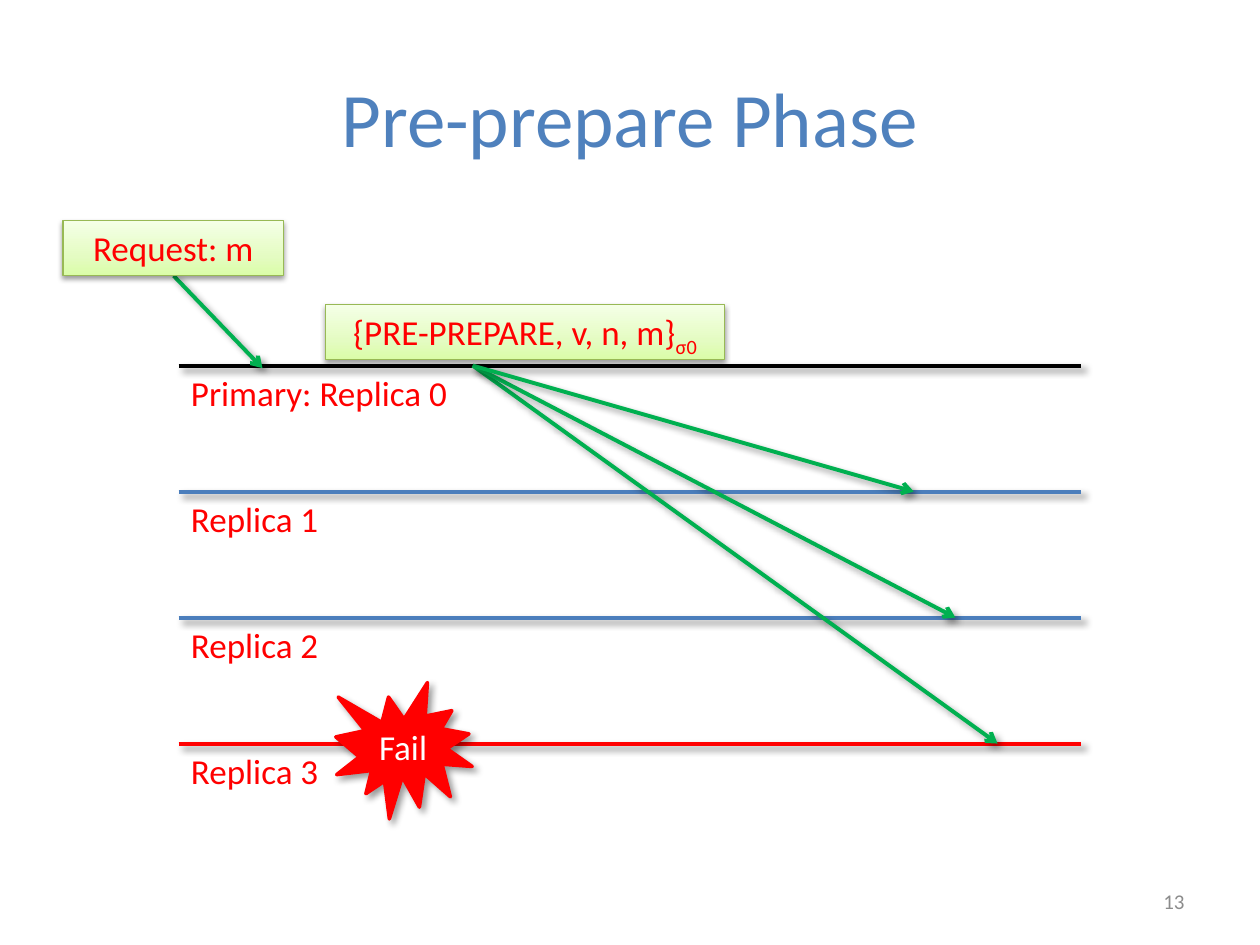
from copy import deepcopy

from lxml import etree
from pptx import Presentation
from pptx.dml.color import RGBColor
from pptx.enum import shapes, text
from pptx.oxml import parse_xml
from pptx.oxml.ns import nsdecls, qn
from pptx.util import Cm, Pt

BLACK = RGBColor(0x00, 0x00, 0x00)
WHITE = RGBColor(0xFF, 0xFF, 0xFF)
RED = RGBColor(0xFF, 0x00, 0x00)
GREEN = RGBColor(0x00, 0xB0, 0x50)
BLUE = RGBColor(0x4B, 0x7E, 0xBC)
TITLE_BLUE = RGBColor(0x4F, 0x81, 0xBD)
GREY = RGBColor(0x8C, 0x8C, 0x8C)
BOX_EDGE = RGBColor(0x98, 0xB9, 0x55)
BOX_DARK = RGBColor(0xDA, 0xFD, 0xA7)
BOX_MIDDLE = RGBColor(0xE4, 0xFC, 0xC2)
BOX_LIGHT = RGBColor(0xF5, 0xFF, 0xE7)

LEFT, RIGHT = 3.6, 21.8
FIRST_ROW, ROW_STEP = 7.37, 2.54
ROWS = [FIRST_ROW + i * ROW_STEP for i in range(4)]
LABEL_HEIGHT = 1.11


def write(shape, pieces, size=20, color=RED, align=text.PP_ALIGN.LEFT):
    """Fill a shape with one paragraph; any piece after the first is a subscript."""
    frame = shape.text_frame
    frame.word_wrap = True
    paragraph = frame.paragraphs[0]
    paragraph.alignment = align
    for i, piece in enumerate(pieces):
        run = paragraph.add_run()
        run.text = piece
        run.font.name = "Calibri"
        run.font.size = Pt(size)
        run.font.color.rgb = color
        if i:
            run.font._element.set("baseline", "-25000")


def add_shadow(shape, opacity=40, blur=4, distance=3, angle=45):
    shape._element.spPr.append(parse_xml(
        f'<a:effectLst {nsdecls("a")}>'
        f'<a:outerShdw blurRad="{Pt(blur)}" dist="{Pt(distance)}" '
        f'dir="{angle * 60000}" rotWithShape="0">'
        f'<a:srgbClr val="000000"><a:alpha val="{opacity * 1000}"/></a:srgbClr>'
        '</a:outerShdw></a:effectLst>'))


prs = Presentation()
prs.slide_width, prs.slide_height = Cm(25.4), Cm(19.05)
slide = prs.slides.add_slide(prs.slide_layouts[5])

title = slide.shapes.title
title.left, title.top, title.width, title.height = Cm(1.27), Cm(0.76), Cm(22.86), Cm(3.18)
title.text_frame.vertical_anchor = text.MSO_ANCHOR.MIDDLE
write(title, ["Pre-prepare Phase"], 44, TITLE_BLUE, text.PP_ALIGN.CENTER)

# Timelines of the replicas, then the messages sent between them
timelines = [(LEFT, y, RIGHT, y, color, False)
             for y, color in zip(ROWS, (BLACK, BLUE, BLUE, RED))]
messages = [(9.53, ROWS[0], x, y, GREEN, True)
            for x, y in zip((18.42, 19.26, 20.11), ROWS[1:])]
request = (3.5, 5.56, 5.29, 7.42, GREEN, True)
for x1, y1, x2, y2, color, is_message in timelines + messages[::-1] + [request]:
    line = slide.shapes.add_connector(
        shapes.MSO_CONNECTOR.STRAIGHT, Cm(x1), Cm(y1), Cm(x2), Cm(y2))
    line.line.color.rgb = color
    line.line.width = Pt(2.25)
    if is_message:
        etree.SubElement(line.line._get_or_add_ln(), qn("a:tailEnd"), type="arrow")
    add_shadow(line)

replicas = ["Primary: Replica 0", "Replica 1", "Replica 2", "Replica 3"]
for replica, y in zip(replicas, ROWS):
    label = slide.shapes.add_textbox(Cm(LEFT), Cm(y), Cm(6.78), Cm(LABEL_HEIGHT))
    if y > FIRST_ROW:
        label.width = Cm(4.45)
    write(label, [replica])
    label.text_frame.auto_size = text.MSO_AUTO_SIZE.SHAPE_TO_FIT_TEXT

for x, y, width, content in [
    (1.27, 4.45, 4.45, ["Request: m"]),
    (6.56, 6.14, 8.05, ["{PRE-PREPARE, v, n, m}", "σ0"]),
]:
    box = slide.shapes.add_shape(
        shapes.MSO_SHAPE.RECTANGLE, Cm(x), Cm(y), Cm(width), Cm(LABEL_HEIGHT))
    box.fill.gradient()
    box.fill.gradient_angle = 90
    first_stop = box.fill.gradient_stops[0]._gs
    first_stop.addnext(deepcopy(first_stop))
    for stop, position, color in zip(
            box.fill.gradient_stops, (0, 0.35, 1), (BOX_DARK, BOX_MIDDLE, BOX_LIGHT)):
        stop.position = position
        stop.color.rgb = color
    box.line.color.rgb = BOX_EDGE
    box.line.width = Pt(0.75)
    add_shadow(box, 38, 3.1, 1.6, 90)
    write(box, content, align=text.PP_ALIGN.CENTER)
    box.text_frame.vertical_anchor = text.MSO_ANCHOR.TOP
    box.text_frame.auto_size = text.MSO_AUTO_SIZE.SHAPE_TO_FIT_TEXT

failure = slide.shapes.add_shape(
    shapes.MSO_SHAPE.EXPLOSION1, Cm(6.77), Cm(13.76), Cm(2.75), Cm(2.75))
failure.fill.solid()
failure.fill.fore_color.rgb = RED
failure.line.color.rgb = RED
failure.line.width = Pt(2)
add_shadow(failure)
write(failure, ["Fail"], color=WHITE, align=text.PP_ALIGN.CENTER)
failure.text_frame.vertical_anchor = text.MSO_ANCHOR.MIDDLE

page_number = slide.shapes.add_textbox(Cm(18.2), Cm(17.66), Cm(5.93), Cm(1.01))
write(page_number, ["13"], 12, GREY, text.PP_ALIGN.RIGHT)
page_number.text_frame.vertical_anchor = text.MSO_ANCHOR.MIDDLE

prs.save("out.pptx")
